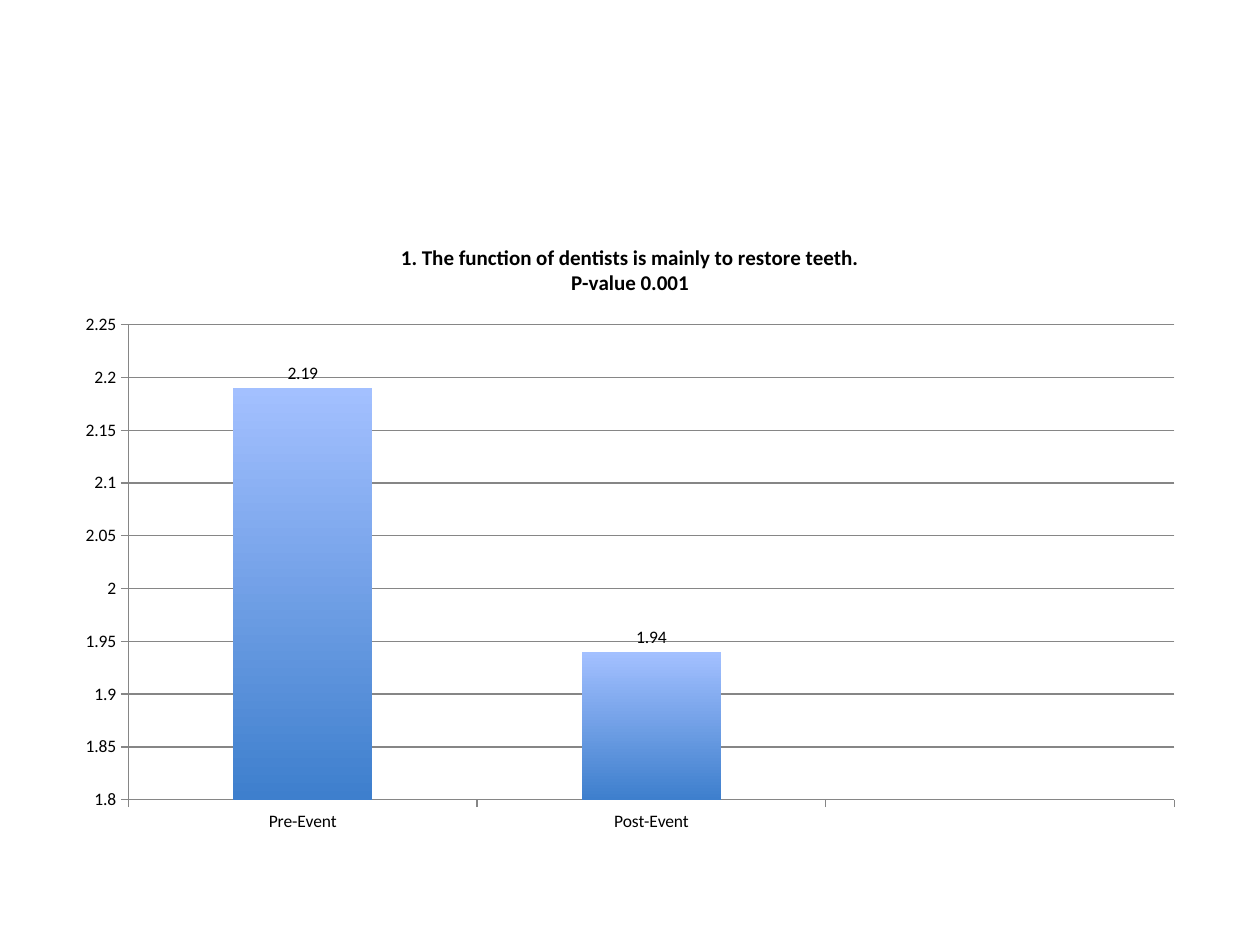
"""Build a slide with a column chart of survey means before and after an event."""
from pptx import Presentation
from pptx.chart.data import CategoryChartData
from pptx.dml.color import RGBColor
from pptx.enum.chart import XL_CHART_TYPE, XL_LABEL_POSITION, XL_TICK_MARK
from pptx.util import Cm, Pt

TITLE_LINES = ["1. The function of dentists is mainly to restore teeth.", "P-value 0.001"]
MEANS = [("Pre-Event", 2.19), ("Post-Event", 1.94), ("", None)]
FONT_NAME = "Calibri"
BLACK = RGBColor(0x00, 0x00, 0x00)
GRAY = RGBColor(0x86, 0x86, 0x86)
BAR_COLORS = [RGBColor(0x3E, 0x7F, 0xCD), RGBColor(0xA3, 0xC0, 0xFF)]


def style_font(font, size, bold=False):
    font.name = FONT_NAME
    font.size = Pt(size)
    font.bold = bold
    font.color.rgb = BLACK


def style_line(line):
    line.color.rgb = GRAY
    line.width = Pt(0.75)


def add_title(chart):
    chart.has_title = True
    chart.chart_title.include_in_layout = False
    text_frame = chart.chart_title.text_frame
    text_frame.text = "\n".join(TITLE_LINES)
    for paragraph in text_frame.paragraphs:
        style_font(paragraph.font, 12, bold=True)


def style_axes(chart):
    for axis in (chart.category_axis, chart.value_axis):
        axis.major_tick_mark = XL_TICK_MARK.OUTSIDE
        axis.minor_tick_mark = XL_TICK_MARK.NONE
        style_line(axis.format.line)
    value_axis = chart.value_axis
    value_axis.minimum_scale = 1.8
    value_axis.maximum_scale = 2.25
    value_axis.major_unit = 0.05
    value_axis.tick_labels.number_format = "General"
    value_axis.tick_labels.number_format_is_linked = False
    value_axis.has_major_gridlines = True
    style_line(value_axis.major_gridlines.format.line)


def style_bars(plot):
    plot.gap_width = 150
    plot.vary_by_categories = False
    fill = plot.series[0].format.fill
    fill.gradient()
    fill.gradient_angle = 90
    for stop, color in zip(fill.gradient_stops, BAR_COLORS):
        stop.color.rgb = color
    plot.has_data_labels = True
    labels = plot.data_labels
    labels.show_value = True
    labels.position = XL_LABEL_POSITION.OUTSIDE_END
    style_font(labels.font, 10)


def main():
    presentation = Presentation()
    presentation.slide_width, presentation.slide_height = Cm(25.4), Cm(19.05)
    slide = presentation.slides.add_slide(presentation.slide_layouts[6])

    chart_data = CategoryChartData()
    chart_data.categories = [category for category, mean in MEANS]
    chart_data.add_series("Series 1", [mean for category, mean in MEANS])
    chart = slide.shapes.add_chart(
        XL_CHART_TYPE.COLUMN_CLUSTERED, Cm(1.27), Cm(4.45), Cm(22.86), Cm(12.57), chart_data
    ).chart
    chart.has_legend = False
    style_font(chart.font, 10)
    add_title(chart)
    style_axes(chart)
    style_bars(chart.plots[0])
    presentation.save("out.pptx")


if __name__ == "__main__":
    main()
